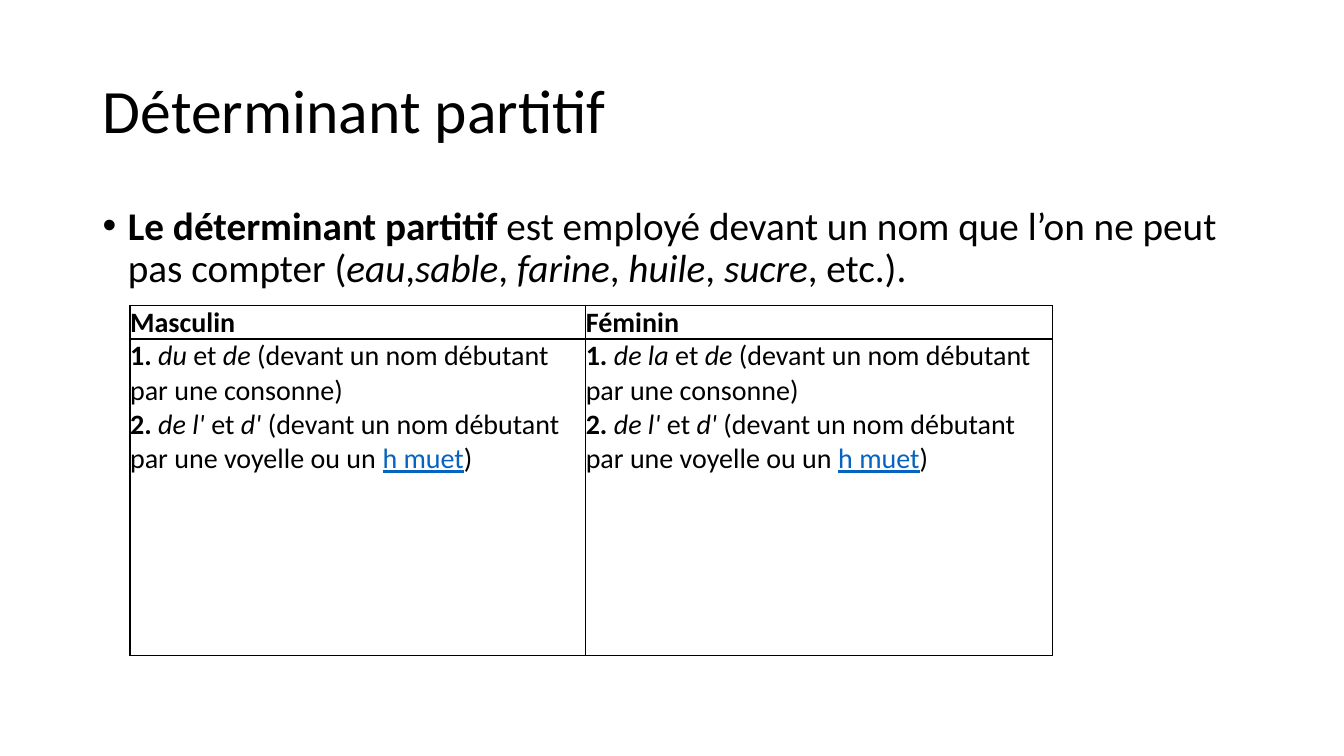
from dataclasses import dataclass

from lxml.etree import SubElement
from pptx import Presentation
from pptx.dml.color import RGBColor
from pptx.enum.text import MSO_ANCHOR, PP_ALIGN
from pptx.oxml.ns import qn
from pptx.util import Inches, Pt


@dataclass(frozen=True)
class Theme:
    font: str = "Calibri"
    ink: str = "000000"
    paper: str = "FFFFFF"
    link: str = "0563C1"
    title_size: int = 44
    rule_size: int = 28
    table_size: int = 20
    border: int = 1


THEME = Theme()
SLIDE_W, SLIDE_H = 13.33, 7.5

TITLE = "Déterminant partitif"
RULE = [
    ("Le déterminant partitif ", "b"),
    ("est employé devant un nom que l’on ne peut pas compter (", ""),
    ("eau", "i"), (",", ""), ("sable", "i"), (",", ""), (" farine", "i"),
    (",", ""), (" huile", "i"), (", ", ""), ("sucre", "i"), (", etc.).", ""),
]
GENDERS = [("Masculin", "du"), ("Féminin", "de la")]
VOWEL_FORMS = [
    ("2. ", "b"), ("de l'", "i"), (" et ", ""), ("d' ", "i"),
    ("(devant un nom débutant par une voyelle ou un ", ""),
    ("h muet", "u"), (")", ""),
]

MARGIN = 0.92
CONTENT_W = SLIDE_W - 2 * MARGIN
TITLE_BOX = (MARGIN, 0.4, CONTENT_W, 1.45)
RULE_BOX = (MARGIN, 2, CONTENT_W, 4.76)
TABLE_LEFT, TABLE_TOP = 1.29, 3.03
COLUMNS = [4.52, 4.63]
ROWS = [0.24, 3.14]
BULLET_INDENT = 0.25


def consonant_forms(article):
    return [("1. ", "b"), (article, "i"), (" et ", ""), ("de", "i"),
            (" (devant un nom débutant par une consonne)", "")]


def set_font(paragraph, size):
    paragraph.font.name = THEME.font
    paragraph.font.size = Pt(size)
    paragraph.font.color.rgb = RGBColor.from_string(THEME.ink)


def write(paragraph, lines, size):
    set_font(paragraph, size)
    for number, line in enumerate(lines):
        if number:
            paragraph.add_line_break()
        for text, style in line:
            run = paragraph.add_run()
            run.text = text
            if style == "b":
                run.font.bold = True
            elif style == "i":
                run.font.italic = True
            elif style == "u":
                run.font.underline = True
                run.font.color.rgb = RGBColor.from_string(THEME.link)


def add_bullet(paragraph):
    properties = paragraph._p.get_or_add_pPr()
    indent = Inches(BULLET_INDENT)
    properties.set("marL", str(indent))
    properties.set("indent", str(-indent))
    bullet_font = properties.makeelement(qn("a:buFont"), {"typeface": "Arial"})
    bullet = properties.makeelement(qn("a:buChar"), {"char": "•"})
    defaults = properties.find(qn("a:defRPr"))
    defaults.addprevious(bullet_font)
    defaults.addprevious(bullet)


def add_borders(cell):
    properties = cell._tc.get_or_add_tcPr()
    for position, side in enumerate(("a:lnL", "a:lnR", "a:lnT", "a:lnB")):
        line = properties.makeelement(qn(side), {"w": str(Pt(THEME.border))})
        fill = SubElement(line, qn("a:solidFill"))
        SubElement(fill, qn("a:srgbClr"), val=THEME.ink)
        properties.insert(position, line)


def add_title(slide):
    title = slide.shapes.title
    title.left, title.top, title.width, title.height = map(Inches, TITLE_BOX)
    frame = title.text_frame
    frame.vertical_anchor = MSO_ANCHOR.MIDDLE
    paragraph = frame.paragraphs[0]
    paragraph.alignment = PP_ALIGN.LEFT
    paragraph.line_spacing = 0.9
    write(paragraph, [[(TITLE, "")]], THEME.title_size)


def add_rule(slide):
    frame = slide.shapes.add_textbox(*map(Inches, RULE_BOX)).text_frame
    frame.word_wrap = True
    paragraph = frame.paragraphs[0]
    paragraph.line_spacing = 0.9
    paragraph.space_before = Pt(10)
    write(paragraph, [RULE], THEME.rule_size)
    add_bullet(paragraph)


def add_forms_table(slide):
    box = (TABLE_LEFT, TABLE_TOP, sum(COLUMNS), sum(ROWS))
    table = slide.shapes.add_table(
        len(ROWS), len(COLUMNS), *map(Inches, box)).table
    table.horz_banding = False
    for row, height in zip(table.rows, ROWS):
        row.height = Inches(height)
    for index, (width, (gender, article)) in enumerate(zip(COLUMNS, GENDERS)):
        table.columns[index].width = Inches(width)
        contents = [[[(gender, "b")]], [consonant_forms(article), VOWEL_FORMS]]
        for row, lines in enumerate(contents):
            cell = table.cell(row, index)
            cell.margin_left = cell.margin_right = 0
            cell.margin_top = cell.margin_bottom = 0
            cell.fill.solid()
            cell.fill.fore_color.rgb = RGBColor.from_string(THEME.paper)
            add_borders(cell)
            write(cell.text_frame.paragraphs[0], lines, THEME.table_size)
    table.first_row = False


def main():
    deck = Presentation()
    deck.slide_width, deck.slide_height = Inches(SLIDE_W), Inches(SLIDE_H)
    slide = deck.slides.add_slide(deck.slide_layouts[5])
    add_title(slide)
    add_rule(slide)
    add_forms_table(slide)
    deck.save("out.pptx")


if __name__ == "__main__":
    main()
